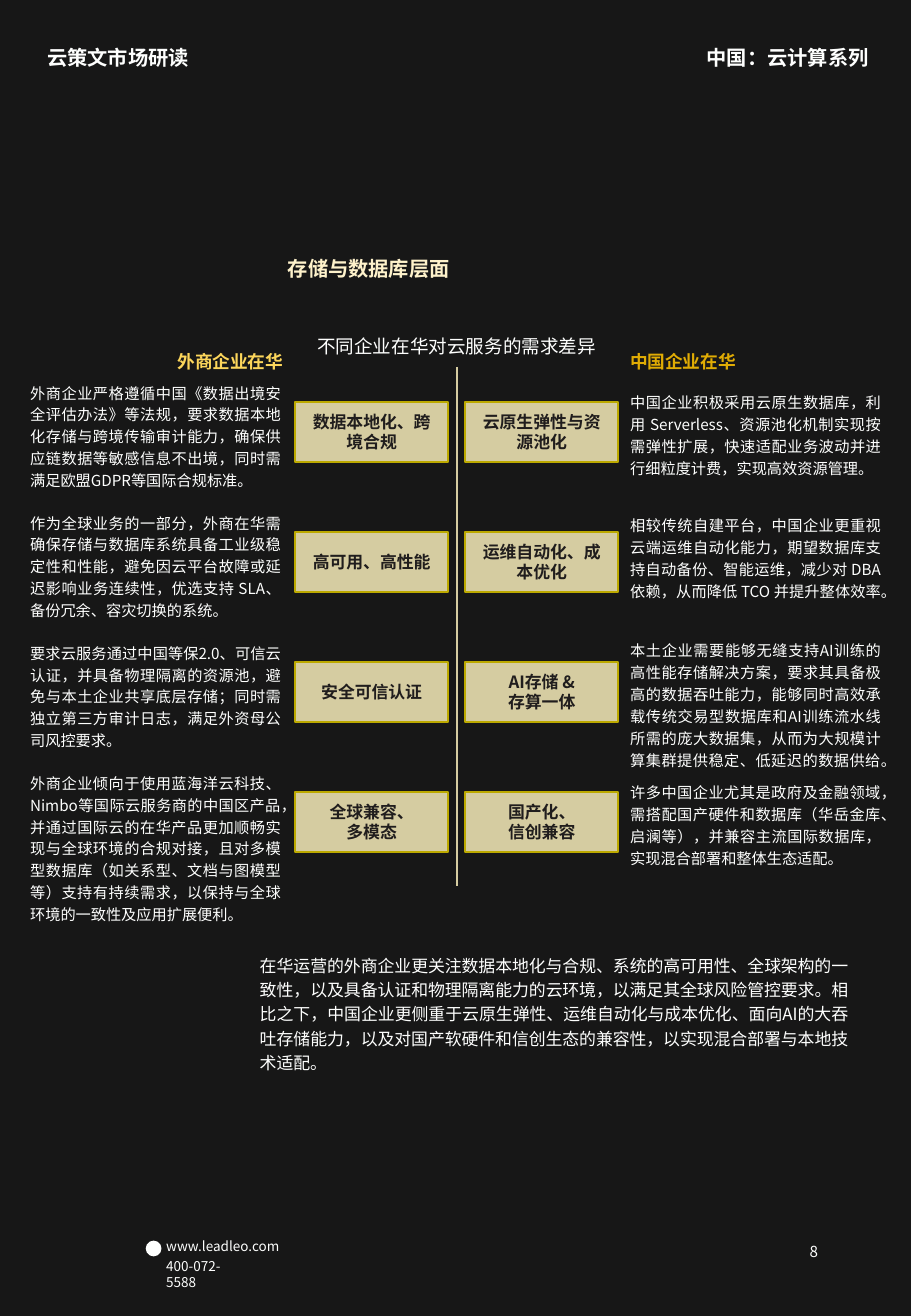
import lxml.etree
import pptx
import pptx.dml.color
import pptx.enum.shapes
import pptx.enum.text
import pptx.oxml.ns
import pptx.util

Inches = pptx.util.Inches
Pt = pptx.util.Pt
ALIGN = pptx.enum.text.PP_ALIGN
ANCHOR = pptx.enum.text.MSO_ANCHOR
SHAPE = pptx.enum.shapes.MSO_SHAPE
qn = pptx.oxml.ns.qn

COLORS = {
    "page": "171717",
    "white": "FEFFFE",
    "ink": "201D1D",
    "card": "D5CCA1",
    "card_edge": "BCA900",
    "foreign": "FCD65B",
    "chinese": "E0AC04",
    "title": "FEF2CB",
}


def rgb(name):
    return pptx.dml.color.RGBColor.from_string(COLORS[name])


class Page:
    font = "Noto Sans CJK SC"

    def __init__(self, slide):
        self.slide = slide
        fill = slide.background.fill
        fill.solid()
        fill.fore_color.rgb = rgb("page")

    def fill_text(self, frame, text, size, color, bold, align, spacing=None):
        frame.word_wrap = True
        for number, line in enumerate(text.split("\n")):
            paragraph = frame.paragraphs[0] if number == 0 else frame.add_paragraph()
            paragraph.text = line
            paragraph.alignment = align
            if spacing:
                paragraph.line_spacing = spacing
            font = paragraph.font
            font.size = Pt(size)
            font.bold = bold
            font.name = self.font
            font.color.rgb = rgb(color)
            # East Asian glyphs take their typeface from a separate element
            properties = paragraph._p.pPr.find(qn("a:defRPr"))
            lxml.etree.SubElement(properties, qn("a:ea"), typeface=self.font)

    def text(self, left, top, width, height, text, size, color="white", bold=False,
             align=ALIGN.LEFT, spacing=None, anchor=ANCHOR.TOP):
        box = self.slide.shapes.add_textbox(
            Inches(left), Inches(top), Inches(width), Inches(height))
        frame = box.text_frame
        frame.vertical_anchor = anchor
        self.fill_text(frame, text, size, color, bold, align, spacing)
        return frame

    def body(self, left, top, width, height, text, size=9):
        self.text(left, top, width, height, text, size, align=ALIGN.JUSTIFY, spacing=1.2)

    def card(self, left, top, text):
        card = self.slide.shapes.add_shape(
            SHAPE.RECTANGLE, Inches(left), Inches(top), Inches(1.26), Inches(0.49))
        card.shadow.inherit = False
        card.fill.solid()
        card.fill.fore_color.rgb = rgb("card")
        card.line.color.rgb = rgb("card_edge")
        card.line.width = Pt(1)
        card.text_frame.vertical_anchor = ANCHOR.MIDDLE
        self.fill_text(card.text_frame, text, 10, "ink", True, ALIGN.CENTER)

    def divider(self, x, top, bottom):
        line = self.slide.shapes.add_connector(
            pptx.enum.shapes.MSO_CONNECTOR.STRAIGHT,
            Inches(x), Inches(top), Inches(x), Inches(bottom))
        line.line.color.rgb = rgb("card")
        line.line.width = Pt(1)
        lxml.etree.SubElement(line._element.spPr, qn("a:effectLst"))

    def dot(self, left, top, size):
        dot = self.slide.shapes.add_shape(
            SHAPE.OVAL, Inches(left), Inches(top), Inches(size), Inches(size))
        dot.shadow.inherit = False
        dot.fill.solid()
        dot.fill.fore_color.rgb = rgb("white")
        dot.line.fill.background()

    def outline(self, points, closed):
        """Draw a thin white polyline through points given in inches."""
        builder = self.slide.shapes.build_freeform(*points[0], scale=Inches(1))
        builder.add_line_segments(points[1:], close=closed)
        shape = builder.convert_to_shape()
        shape.shadow.inherit = False
        shape.fill.background()
        shape.line.color.rgb = rgb("white")
        shape.line.width = Pt(0.5)


HANDSET = [(1.22, 10.38), (1.24, 10.37), (1.26, 10.39), (1.24, 10.41), (1.28, 10.45),
           (1.3, 10.43), (1.33, 10.45), (1.31, 10.47), (1.27, 10.47), (1.24, 10.45),
           (1.22, 10.42)]
SIGNAL = [(1.28, 10.37), (1.31, 10.38), (1.33, 10.41)]

FOREIGN_ROWS = [
    ("数据本地化、跨境合规", 1,
     "外商企业严格遵循中国《数据出境安全评估办法》等法规，要求数据本地化存储与跨境传输审计能力，"
     "确保供应链数据等敏感信息不出境，同时需满足欧盟GDPR等国际合规标准。"),
    ("高可用、高性能", 1,
     "作为全球业务的一部分，外商在华需确保存储与数据库系统具备工业级稳定性和性能，"
     "避免因云平台故障或延迟影响业务连续性，优选支持 SLA、备份冗余、容灾切换的系统。"),
    ("安全可信认证", 1,
     "要求云服务通过中国等保2.0、可信云认证，并具备物理隔离的资源池，避免与本土企业共享底层存储；"
     "同时需独立第三方审计日志，满足外资母公司风控要求。"),
    ("全球兼容、\n多模态", 1.35,
     "外商企业倾向于使用蓝海洋云科技、Nimbo等国际云服务商的中国区产品，"
     "并通过国际云的在华产品更加顺畅实现与全球环境的合规对接，"
     "且对多模型数据库（如关系型、文档与图模型等）支持有持续需求，"
     "以保持与全球环境的一致性及应用扩展便利。"),
]

CHINESE_ROWS = [
    ("云原生弹性与资源池化", 3.16, 0.82,
     "中国企业积极采用云原生数据库，利用 Serverless、资源池化机制实现按需弹性扩展，"
     "快速适配业务波动并进行细粒度计费，实现高效资源管理。"),
    ("运维自动化、成本优化", 4.17, 1,
     "相较传统自建平台，中国企业更重视云端运维自动化能力，期望数据库支持自动备份、智能运维，"
     "减少对 DBA 依赖，从而降低 TCO 并提升整体效率。"),
    ("AI存储 &\n存算一体", 5.2, 1.18,
     "本土企业需要能够无缝支持AI训练的高性能存储解决方案，要求其具备极高的数据吞吐能力，"
     "能够同时高效承载传统交易型数据库和AI训练流水线所需的庞大数据集，"
     "从而为大规模计算集群提供稳定、低延迟的数据供给。"),
    ("国产化、\n信创兼容", 6.37, 0.82,
     "许多中国企业尤其是政府及金融领域，需搭配国产硬件和数据库（华岳金库、启澜等），"
     "并兼容主流国际数据库，实现混合部署和整体生态适配。"),
]

SUMMARY = (
    "在华运营的外商企业更关注数据本地化与合规、系统的高可用性、全球架构的一致性，"
    "以及具备认证和物理隔离能力的云环境，以满足其全球风险管控要求。"
    "相比之下，中国企业更侧重于云原生弹性、运维自动化与成本优化、面向AI的大吞吐存储能力，"
    "以及对国产软硬件和信创生态的兼容性，以实现混合部署与本地技术适配。")


def main():
    deck = pptx.Presentation()
    deck.slide_width = Inches(7.5)
    deck.slide_height = Inches(10.83)
    page = Page(deck.slides.add_slide(deck.slide_layouts[6]))

    page.text(0.29, 0.32, 1.4, 0.3, "云策文市场研读", 12, bold=True)
    page.text(5.72, 0.32, 1.58, 0.3, "中国：云计算系列", 12, bold=True)
    page.dot(1.2, 10.21, 0.13)
    page.text(1.27, 10.14, 1.18, 0.24, "www.leadleo.com", 8)
    page.outline(HANDSET, closed=True)
    page.outline(SIGNAL, closed=False)
    page.text(1.27, 10.3, 0.8, 0.24, "400-072-5588", 8)
    page.text(6.26, 10.14, 0.88, 0.32, "8", 9, align=ALIGN.CENTER, anchor=ANCHOR.MIDDLE)

    title = page.text(2.33, 1.95, 4.25, 0.55, "存储与数据库层面", 12, "title", True,
                      spacing=0.9, anchor=ANCHOR.MIDDLE)
    title.margin_left = title.margin_right = Inches(0.04)
    title.margin_top = title.margin_bottom = Inches(0.02)

    page.text(2.2, 2.67, 3.12, 0.31, "不同企业在华对云服务的需求差异", 11,
              align=ALIGN.CENTER, spacing=1.2)
    page.text(1.11, 2.8, 1.32, 0.3, "外商企业在华", 10.5, "foreign", True, ALIGN.RIGHT, 1.2)
    page.text(5.09, 2.8, 1.51, 0.3, "中国企业在华", 10.5, "chinese", True, spacing=1.2)
    page.divider(3.76, 3.02, 7.29)

    row_pitch = 1.07
    for row, (foreign, chinese) in enumerate(zip(FOREIGN_ROWS, CHINESE_ROWS)):
        need, height, detail = foreign
        page.card(2.43, 3.31 + row * row_pitch, need)
        page.body(0.15, 3.08 + row * row_pitch, 2.26, height, detail)
        need, top, height, detail = chinese
        page.card(3.83, 3.31 + row * row_pitch, need)
        page.body(5.09, top, 2.26, height, detail)

    page.body(2.04, 7.78, 5.04, 1.1, SUMMARY, size=10)
    deck.save("out.pptx")


if __name__ == "__main__":
    main()
